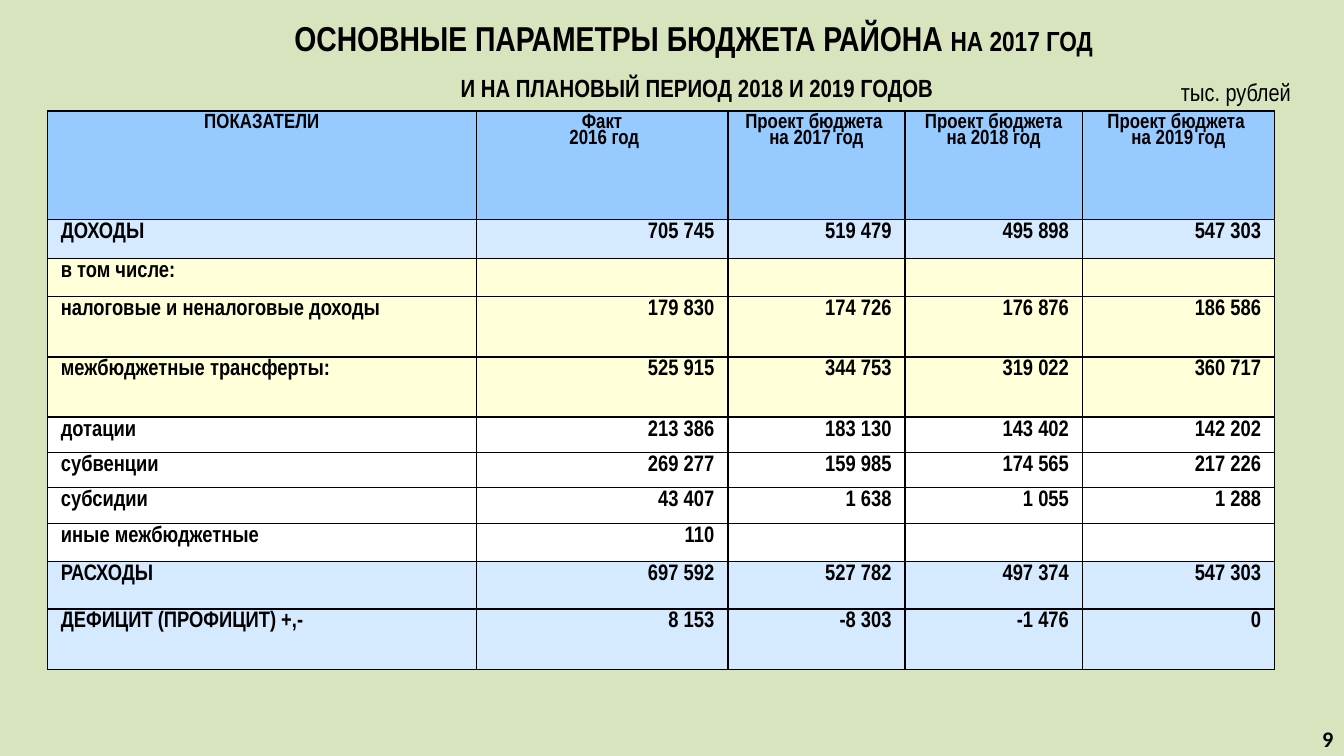
from lxml.etree import SubElement
from pptx import Presentation
from pptx.dml.color import RGBColor
from pptx.enum.text import MSO_ANCHOR, PP_ALIGN
from pptx.oxml.ns import qn
from pptx.util import Pt

BACKGROUND = RGBColor(0xD7, 0xE4, 0xBD)
BLACK = RGBColor(0, 0, 0)
HEADER = RGBColor(0x97, 0xCB, 0xFF)
TOTAL = RGBColor(0xD5, 0xEA, 0xFF)
INCOME = RGBColor(0xFF, 0xFF, 0xD9)
TRANSFER = RGBColor(0xFF, 0xFF, 0xFF)


def write(paragraph, text, size=12, bold=True, font="Arial Narrow",
          align=PP_ALIGN.LEFT, spacing=1.0, small_caps=False):
    paragraph.alignment = align
    paragraph.line_spacing = spacing
    if not text:  # keeps an empty cell as low as its row
        SubElement(paragraph._p, qn("a:endParaRPr"), sz=str(size * 100))
        return
    run = paragraph.add_run()
    run.text = text
    run.font.size = Pt(size)
    run.font.bold = bold
    run.font.name = font
    run.font.color.rgb = BLACK
    if small_caps:
        run._r.get_or_add_rPr().set("cap", "small")


def add_frame(left, top, width, height, anchor=MSO_ANCHOR.MIDDLE):
    box = slide.shapes.add_textbox(Pt(left), Pt(top), Pt(width), Pt(height))
    frame = box.text_frame
    frame.word_wrap = True
    frame.vertical_anchor = anchor
    return frame


presentation = Presentation()
presentation.slide_width = Pt(720)
presentation.slide_height = Pt(405)
slide = presentation.slides.add_slide(presentation.slide_layouts[6])
slide.background.fill.solid()
slide.background.fill.fore_color.rgb = BACKGROUND

# Budget table: fill, row height, cell texts
rows = [
    (HEADER, 57.9, ["ПОКАЗАТЕЛИ", "Факт\n 2016 год", "Проект бюджета \nна 2017 год",
                    "Проект бюджета\nна 2018 год", "Проект бюджета \nна 2019 год"]),
    (TOTAL, 21, ["ДОХОДЫ", "705 745", "519 479", "495 898", "547 303"]),
    (INCOME, 18.9, ["в том числе:", "", "", "", ""]),
    (INCOME, 32.3, ["налоговые и неналоговые доходы", "179 830", "174 726", "176 876", "186 586"]),
    (INCOME, 32.3, ["межбюджетные трансферты:", "525 915", "344 753", "319 022", "360 717"]),
    (TRANSFER, 18.9, ["дотации", "213 386", "183 130", "143 402", "142 202"]),
    (TRANSFER, 18.9, ["субвенции", "269 277", "159 985", "174 565", "217 226"]),
    (TRANSFER, 19.2, ["субсидии", "43 407", "1 638", "1 055", "1 288"]),
    (TRANSFER, 18.9, ["иные межбюджетные", "110", "", "", ""]),
    (TOTAL, 25.4, ["РАСХОДЫ", "697 592", "527 782", "497 374", "547 303"]),
    (TOTAL, 32.4, ["ДЕФИЦИТ (ПРОФИЦИТ) +,-", "8 153", "-8 303", "-1 476", "0"]),
]
column_widths = [229.8, 134.7, 95, 95, 103]
budget = slide.shapes.add_table(
    len(rows), len(column_widths), Pt(25.4), Pt(59.6),
    Pt(sum(column_widths)), Pt(sum(height for _, height, _ in rows))).table
budget.horz_banding = False
for column, width in zip(budget.columns, column_widths):
    column.width = Pt(width)

for row_index, (fill, height, texts) in enumerate(rows):
    budget.rows[row_index].height = Pt(height)
    for column_index, text in enumerate(texts):
        cell = budget.cell(row_index, column_index)
        cell.margin_left = cell.margin_right = Pt(7.2)
        cell.margin_top = cell.margin_bottom = Pt(2.9)

        # Black one-point borders
        properties = cell._tc.get_or_add_tcPr()
        for side in ("lnL", "lnR", "lnT", "lnB"):
            border = SubElement(properties, qn("a:" + side), w=str(Pt(1)))
            color = SubElement(border, qn("a:solidFill"))
            SubElement(color, qn("a:srgbClr"), val=str(BLACK))
        cell.fill.solid()
        cell.fill.fore_color.rgb = fill

        # Centred headings, labels on the left, amounts on the right
        if row_index == 0:
            align, size = PP_ALIGN.CENTER, 11
        else:
            align, size = (PP_ALIGN.RIGHT if column_index else PP_ALIGN.LEFT), 12
        for line_index, line in enumerate(text.split("\n")):
            frame = cell.text_frame
            paragraph = frame.add_paragraph() if line_index else frame.paragraphs[0]
            write(paragraph, line, size=size, align=align, spacing=0.8)

# Unit of measure
unit = add_frame(602, 40.5, 96.5, 17)
write(unit.paragraphs[0], "тыс. рублей", size=13, bold=False, align=PP_ALIGN.RIGHT)

# Title
title = add_frame(20.2, 8.8, 702.7, 45.4)
title_lines = [
    [("ОСНОВНЫЕ ПАРАМЕТРЫ БЮДЖЕТА РАЙОНА ", 18.5, False), ("на 2017 год", 18.5, True)],
    [(" ", 18.5, True), ("и на плановый период 2018 и 2019 годов", 16.6, True)],
]
for paragraph, parts in zip([title.paragraphs[0], title.add_paragraph()], title_lines):
    for text, size, small_caps in parts:
        write(paragraph, text, size=size, align=PP_ALIGN.CENTER, spacing=1.1,
              small_caps=small_caps)

# Page number
page_number = add_frame(684, 385.2, 37.4, 18.7, anchor=MSO_ANCHOR.TOP)
write(page_number.paragraphs[0], "9", size=11.9, font="Calibri", align=PP_ALIGN.RIGHT)

presentation.save("out.pptx")
